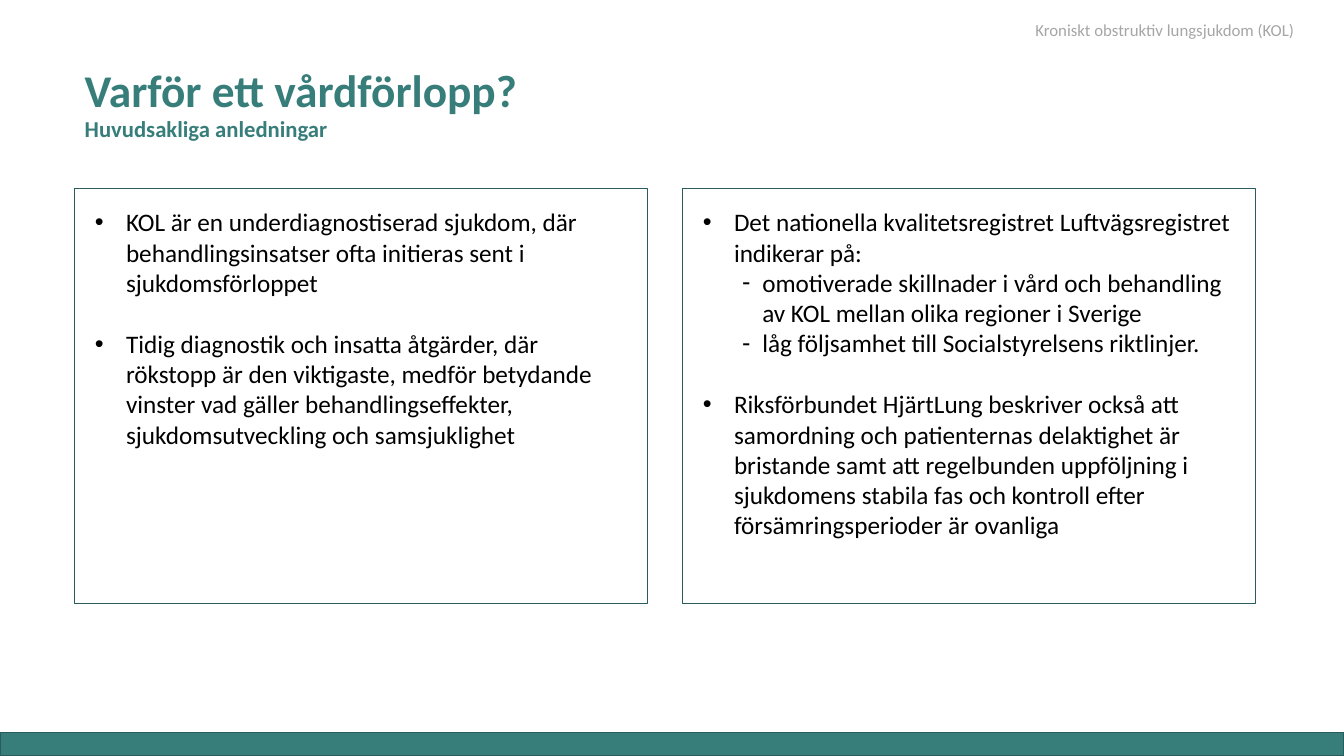
import pptx
import pptx.dml.color
import pptx.enum.shapes
import pptx.enum.text
import pptx.oxml.ns
import pptx.util
from lxml import etree

RGBColor = pptx.dml.color.RGBColor
TEAL = RGBColor(0x37, 0x7D, 0x7A)
DARK_TEAL = RGBColor(0x29, 0x5C, 0x5A)
BLACK = RGBColor(0, 0, 0)
WHITE = RGBColor(0xFF, 0xFF, 0xFF)
GREY = RGBColor(0xA6, 0xA6, 0xA6)

WIDTH, HEIGHT = 13.33, 7.5
FONT = "Calibri"
PANEL_LEFT, PANEL_TOP = 0.74, 1.87
PANEL_WIDTH, PANEL_HEIGHT, PANEL_GAP = 5.68, 4.12, 0.35
BULLET, DASH = ("•", 0.31, 0.31), ("-", 0.59, 0.2)
ITEM_GAP = 22

REASONS = [
    [
        (BULLET, 0, "KOL är en underdiagnostiserad sjukdom, där behandlingsinsatser "
                    "ofta initieras sent i sjukdomsförloppet"),
        (BULLET, ITEM_GAP, "Tidig diagnostik och insatta åtgärder, där rökstopp är den "
                           "viktigaste, medför betydande vinster vad gäller "
                           "behandlingseffekter, sjukdomsutveckling och samsjuklighet"),
    ],
    [
        (BULLET, 0, "Det nationella kvalitetsregistret Luftvägsregistret indikerar på:"),
        (DASH, 0, "omotiverade skillnader i vård och behandling av KOL mellan olika "
                  "regioner i Sverige"),
        (DASH, 0, "låg följsamhet till Socialstyrelsens riktlinjer."),
        (BULLET, ITEM_GAP, "Riksförbundet HjärtLung beskriver också att samordning och "
                           "patienternas delaktighet är bristande samt att regelbunden "
                           "uppföljning i sjukdomens stabila fas och kontroll efter "
                           "försämringsperioder är ovanliga"),
    ],
]


def inches(*lengths):
    """Convert lengths in inches to a list of slide units."""
    return [pptx.util.Inches(length) for length in lengths]


def write(para, text, size=18, color=BLACK, bold=False):
    """Add a formatted span of text to a paragraph."""
    span = para.add_run()
    span.text = text
    span.font.name = FONT
    span.font.size = pptx.util.Pt(size)
    span.font.bold = bold
    span.font.color.rgb = color


def place(holder, left, top, width, height, anchor=pptx.enum.text.MSO_ANCHOR.TOP):
    """Move a text holder to a box and return its prepared text frame."""
    holder.left, holder.top, holder.width, holder.height = inches(left, top, width, height)
    frame = holder.text_frame
    frame.word_wrap = True
    frame.auto_size = pptx.enum.text.MSO_AUTO_SIZE.NONE
    frame.vertical_anchor = anchor
    return frame


def add_rectangle(page, box, fill=None):
    """Add a rectangle with a dark teal outline and an optional fill."""
    rectangle = page.shapes.add_shape(
        pptx.enum.shapes.MSO_SHAPE.RECTANGLE, *inches(*box))
    rectangle.shadow.inherit = False
    if fill is None:
        rectangle.fill.background()
    else:
        rectangle.fill.solid()
        rectangle.fill.fore_color.rgb = fill
    rectangle.line.color.rgb = DARK_TEAL
    rectangle.line.width = pptx.util.Pt(1)


def add_topic(page, left, top, width, height):
    """Add the topic of the deck in small grey text."""
    frame = place(page.shapes.add_textbox(0, 0, 0, 0), left, top, width, height)
    write(frame.paragraphs[0], "Kroniskt obstruktiv lungsjukdom (KOL)",
          size=12, color=GREY)


def add_heading(page, left, top, width, height):
    """Fill the title placeholder with the heading and its subheading."""
    frame = place(page.shapes.title, left, top, width, height,
                  pptx.enum.text.MSO_ANCHOR.BOTTOM)
    para = frame.paragraphs[0]
    para.alignment = pptx.enum.text.PP_ALIGN.LEFT
    para.line_spacing = 0.9
    write(para, "Varför ett vårdförlopp?", size=32.4, color=TEAL, bold=True)
    para.add_line_break()
    write(para, "Huvudsakliga anledningar", size=16.2, color=TEAL, bold=True)


def set_bullet(para, mark, margin, hanging):
    """Give a paragraph a bullet character and a hanging indent."""
    properties = para._p.get_or_add_pPr()
    properties.set("marL", str(pptx.util.Inches(margin)))
    properties.set("indent", str(-pptx.util.Inches(hanging)))
    bullet = etree.SubElement(properties, pptx.oxml.ns.qn("a:buChar"))
    bullet.set("char", mark)


def add_panel(page, holder, items, left, top, width, height):
    """Draw a framed panel and fill its body placeholder with a list."""
    add_rectangle(page, (left, top, width, height))
    frame = place(holder, left + 0.1, top + 0.13, width - 0.21, height - 0.26)
    for number, (style, gap, text) in enumerate(items):
        para = frame.add_paragraph() if number else frame.paragraphs[0]
        set_bullet(para, *style)
        para.space_before = pptx.util.Pt(gap)
        write(para, text)


def add_reasons_page(deck):
    """Build the page with a heading and two framed lists of reasons."""
    page = deck.slides.add_slide(deck.slide_layouts.get_by_name("Two Content"))
    page.background.fill.solid()
    page.background.fill.fore_color.rgb = WHITE
    add_rectangle(page, (0, HEIGHT - 0.23, WIDTH, 0.23), fill=TEAL)
    add_heading(page, PANEL_LEFT, 0.79, 10, 0.67)
    for column, items in enumerate(REASONS):
        left = PANEL_LEFT + column * (PANEL_WIDTH + PANEL_GAP)
        add_panel(page, page.placeholders[column + 1], items,
                  left, PANEL_TOP, PANEL_WIDTH, PANEL_HEIGHT)
    add_topic(page, 10.17, 0.15, 2.79, 0.3)


def main():
    """Create the deck and save it."""
    deck = pptx.Presentation()
    deck.slide_width, deck.slide_height = inches(WIDTH, HEIGHT)
    add_reasons_page(deck)
    deck.save("out.pptx")


if __name__ == "__main__":
    main()
